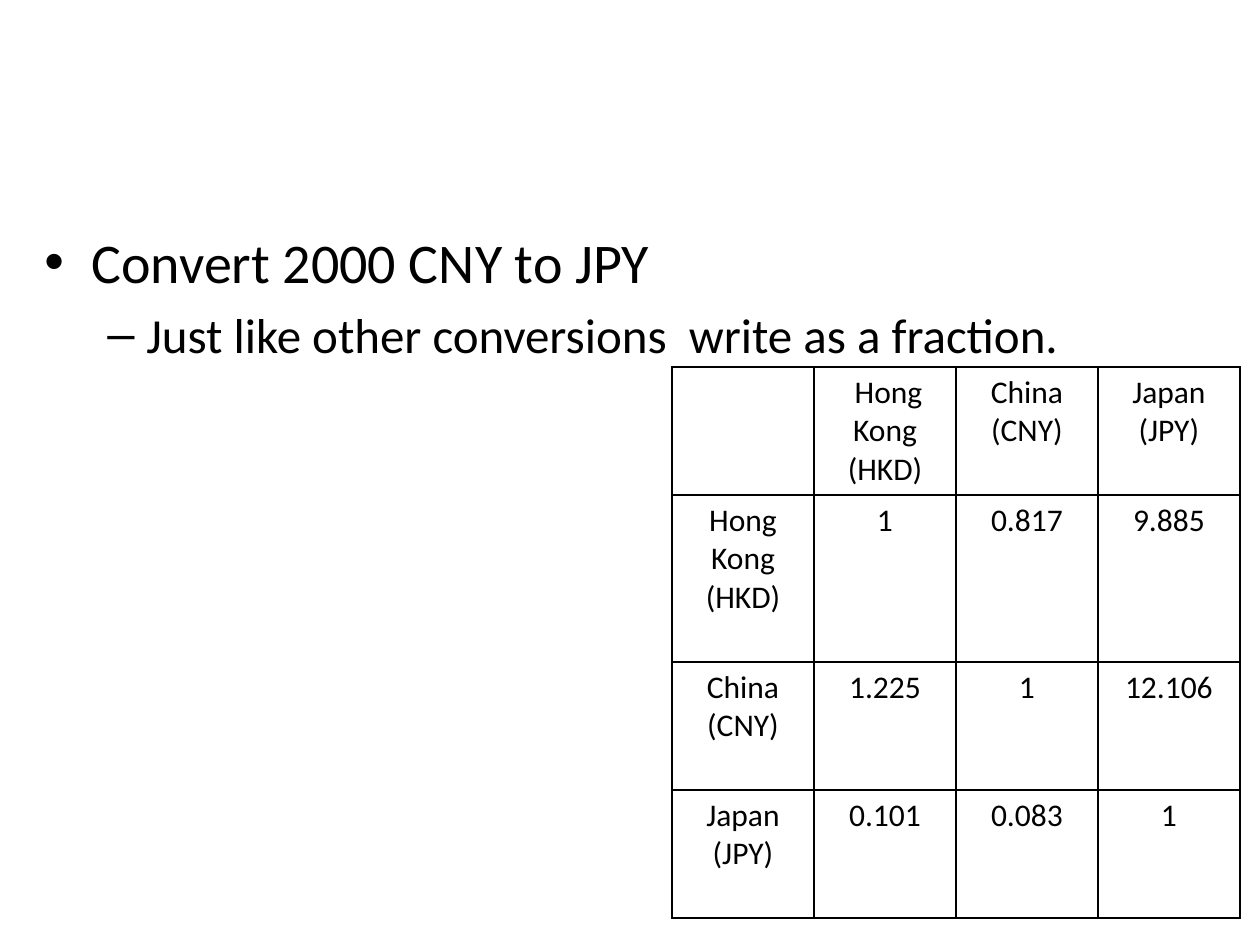
import pptx
import pptx.dml.color
import pptx.enum.text
import pptx.oxml
import pptx.oxml.ns
import pptx.util

BLACK = pptx.dml.color.RGBColor(0, 0, 0)
PX = 914400 / 126
NS = pptx.oxml.ns.nsdecls("a")

BULLETS = [
    dict(text="Convert 2000 CNY to JPY", level=0, char="•",
         left=47, hang=47, size=32, before=0),
    dict(text="Just like other conversions  write as a fraction.", level=1, char="–",
         left=102, hang=39, size=28, before=5.6),
]
RATES = [
    ["", " Hong Kong (HKD)", "China (CNY)", "Japan (JPY)"],
    ["Hong Kong (HKD)", "1", "0.817", "9.885"],
    ["China (CNY)", "1.225", "1", "12.106"],
    ["Japan (JPY)", "0.101", "0.083", "1"],
]


def px(n):
    return pptx.util.Emu(round(n * PX))


class Deck:
    def __init__(self, width, height):
        self.style = {"name": "Calibri", "bold": False}
        self.prs = pptx.Presentation()
        self.prs.slide_width, self.prs.slide_height = px(width), px(height)
        self.s = self.prs.slides.add_slide(self.prs.slide_layouts[6])

    def run(self, p, text, size):
        r = p.add_run()
        r.text = text
        for key, value in {**self.style, "size": pptx.util.Pt(size)}.items():
            setattr(r.font, key, value)
        r.font.color.rgb = BLACK

    def bullets(self, x, y, w, h, items):
        tf = self.s.shapes.add_textbox(px(x), px(y), px(w), px(h)).text_frame
        tf.word_wrap = True
        for i, item in enumerate(items):
            p = tf.add_paragraph() if i else tf.paragraphs[0]
            pPr = p._p.get_or_add_pPr()
            pPr.set("marL", str(px(item["left"])))
            pPr.set("indent", str(-px(item["hang"])))
            for xml in (f'<a:buFont {NS} typeface="Arial"/>',
                        f'<a:buChar {NS} char="{item["char"]}"/>'):
                pPr.append(pptx.oxml.parse_xml(xml))
            p.level = item["level"]
            p.space_before = pptx.util.Pt(item["before"])
            self.run(p, item["text"], item["size"])

    def borders(self, cell):
        tcPr = cell._tc.get_or_add_tcPr()
        for i, side in enumerate(("lnL", "lnR", "lnT", "lnB")):
            tcPr.insert(i, pptx.oxml.parse_xml(
                f'<a:{side} {NS} w="12700"><a:solidFill><a:srgbClr val="{BLACK}"/>'
                f'</a:solidFill></a:{side}>'))

    def table(self, x, y, col_width, row_heights, rows, size):
        n_cols = len(rows[0])
        table = self.s.shapes.add_table(
            len(rows), n_cols, px(x), px(y),
            px(col_width * n_cols), px(sum(row_heights))).table
        table.first_row = table.horz_banding = False
        for col in table.columns:
            col.width = px(col_width)
        for row, height, texts in zip(table.rows, row_heights, rows):
            row.height = px(height)
            for cell, text in zip(row.cells, texts):
                cell.fill.background()
                self.borders(cell)
                if text:
                    p = cell.text_frame.paragraphs[0]
                    p.alignment = pptx.enum.text.PP_ALIGN.CENTER
                    self.run(p, text, size)


def main():
    deck = Deck(1260, 945)
    deck.bullets(32, 221, 1134, 624, BULLETS)
    deck.table(672, 367, 142, [128, 167, 128, 128], RATES, 18)
    deck.prs.save("out.pptx")


if __name__ == "__main__":
    main()
